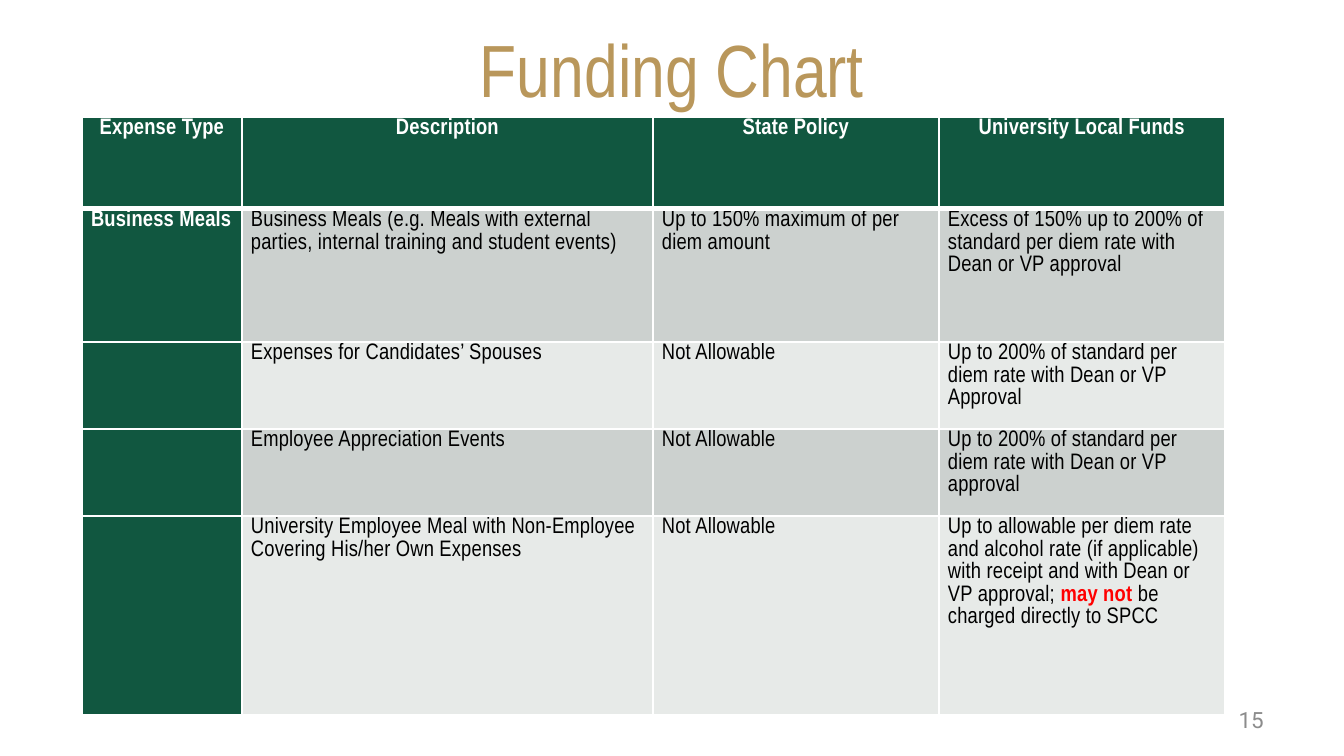
"""Build the Funding Chart slide with its table of expense rules."""
import pptx
import pptx.util
import pptx.dml.color
import pptx.enum.text
import pptx.oxml
import pptx.oxml.ns

SCALE = 914400 / 134.4
GREEN, GOLD, GREY, WHITE, BLACK, RED = "115740", "B9975B", "8C8C8C", "FFFFFF", "000000", "FF0000"
BANDS = ("CCD1CF", "E7EAE8")
ALIGN = pptx.enum.text.PP_ALIGN
MIDDLE = pptx.enum.text.MSO_ANCHOR.MIDDLE

HEADERS = ["Expense Type", "Description", "State Policy", "University Local Funds"]
EXPENSES = [
    ["Business Meals",
     "Business Meals (e.g. Meals with external parties, internal training and student events)",
     "Up to 150% maximum of per diem amount",
     "Excess of 150% up to 200% of standard per diem rate with Dean or VP approval"],
    ["", "Expenses for Candidates’ Spouses", "Not Allowable",
     "Up to 200% of standard per diem rate with Dean or VP Approval"],
    ["", "Employee Appreciation Events", "Not Allowable",
     "Up to 200% of standard per diem rate with Dean or VP approval"],
    ["", "University Employee Meal with Non-Employee Covering His/her Own Expenses",
     "Not Allowable",
     ["Up to allowable per diem rate and alcohol rate (if applicable) with receipt and "
      "with Dean or VP approval; ", "may not ", "be charged directly to SPCC"]],
]
EMPHASIS = "may not "
COLUMN_WIDTHS = [160, 411, 286, 286]
ROW_HEIGHTS = [92, 133, 87, 87, 199]
TITLE = ("Funding Chart", (67, 31, 1210, 73), ALIGN.CENTER, "Arial Narrow", 39.6, GOLD)
PAGE_NUMBER = ("15", (964, 700, 313, 40), ALIGN.RIGHT, "Roboto", 12, GREY)


def px(length):
    return pptx.util.Emu(round(length * SCALE))


def rgb(color):
    return pptx.dml.color.RGBColor.from_string(color)


def style(font, name, size, color, bold=False):
    font.name, font.size, font.bold = name, pptx.util.Pt(size), bold
    font.color.rgb = rgb(color)


def add_label(page, text, area, align, name, size, color):
    box = page.shapes.add_textbox(*map(px, area))
    frame = box.text_frame
    frame.word_wrap = True
    frame.vertical_anchor = MIDDLE
    para = frame.paragraphs[0]
    para.text, para.alignment = text, align
    style(para.font, name, size, color)


def set_borders(cell, widths):
    properties = cell._tc.get_or_add_tcPr()
    for index, (side, width) in enumerate(widths.items()):
        properties.insert(index, pptx.oxml.parse_xml(
            f'<a:{side} {pptx.oxml.ns.nsdecls("a")} w="{pptx.util.Pt(width)}">'
            f'<a:solidFill><a:srgbClr val="{WHITE}"/></a:solidFill></a:{side}>'))


def fill_cell(cell, content, row, column):
    heading = row == 0 or column == 0
    cell.fill.solid()
    cell.fill.fore_color.rgb = rgb(GREEN if heading else BANDS[(row - 1) % 2])
    cell.margin_left = cell.margin_right = px(9)
    cell.margin_top = cell.margin_bottom = 0
    set_borders(cell, {"lnL": 1, "lnR": 1, "lnT": 3 if row == 1 else 1, "lnB": 3 if row == 0 else 1})
    para = cell.text_frame.paragraphs[0]
    para.alignment = ALIGN.CENTER if row == 0 else ALIGN.LEFT
    para.line_spacing = 1.07
    para.space_after = pptx.util.Pt(6)
    style(para.font, "Arial Narrow", 12, WHITE if heading else BLACK, heading)
    para.font._rPr.set("spc", "10")
    for text in [content] if isinstance(content, str) else content:
        if text:
            span = para.add_run()
            span.text = text
            if text == EMPHASIS:
                span.font.bold = True
                span.font.color.rgb = rgb(RED)


def add_funding_table(page):
    rows = [HEADERS] + EXPENSES
    table = page.shapes.add_table(
        len(rows), len(HEADERS), px(82), px(117),
        px(sum(COLUMN_WIDTHS)), px(sum(ROW_HEIGHTS))).table
    table.first_row = table.horz_banding = False
    for column, width in zip(table.columns, COLUMN_WIDTHS):
        column.width = px(width)
    for row, height in zip(table.rows, ROW_HEIGHTS):
        row.height = px(height)
    for row, contents in enumerate(rows):
        for column, content in enumerate(contents):
            fill_cell(table.cell(row, column), content, row, column)


def main():
    deck = pptx.Presentation()
    deck.slide_width, deck.slide_height = px(1344), px(756)
    page = deck.slides.add_slide(deck.slide_layouts[6])
    add_label(page, *TITLE)
    add_funding_table(page)
    add_label(page, *PAGE_NUMBER)
    deck.save("out.pptx")


if __name__ == "__main__":
    main()
